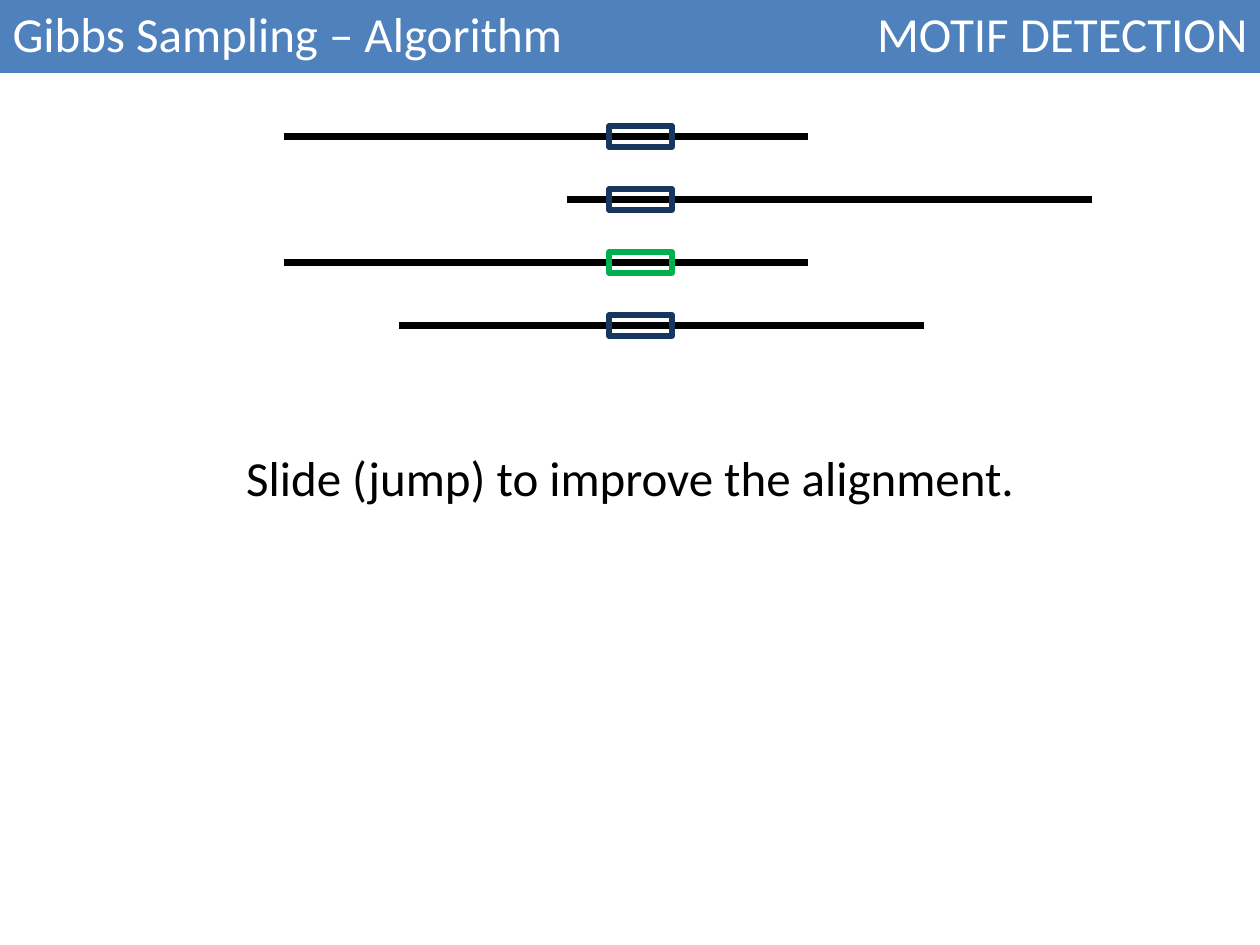
import pptx
import pptx.util
import pptx.dml.color
import pptx.enum.shapes
import pptx.enum.text
import pptx.oxml
import pptx.oxml.ns

Pt = pptx.util.Pt
Align = pptx.enum.text.PP_ALIGN
Anchor = pptx.enum.text.MSO_ANCHOR
HUES = {"bar": "4F81BD", "white": "FFFFFF", "black": "000000",
        "navy": "17375E", "green": "00B050"}


def hue(name):
    return pptx.dml.color.RGBColor.from_string(HUES[name])


def write(frame, text, name, align):
    par = frame.paragraphs[0]
    par.alignment = align
    run = par.add_run()
    run.text = text
    run.font.color.rgb = hue(name)
    style = {"name": "Calibri", "size": Pt(28), "bold": False}
    for key, value in style.items():
        setattr(run.font, key, value)


deck = pptx.Presentation()
deck.slide_width, deck.slide_height = Pt(720), Pt(540)
slide = deck.slides.add_slide(deck.slide_layouts[6])
shapes = slide.shapes

# Title bar: a table of one row, without borders
table = shapes.add_table(1, 2, 0, 0, Pt(720), Pt(41)).table
table.first_row = table.horz_banding = False
titles = [
    ("Gibbs Sampling – Algorithm", 432, Align.LEFT, Anchor.TOP),
    ("MOTIF DETECTION", 288, Align.RIGHT, Anchor.MIDDLE),
]
for col, (text, width, align, anchor) in enumerate(titles):
    table.columns[col].width = Pt(width)
    cell = table.cell(0, col)
    cell.vertical_anchor = anchor
    write(cell.text_frame, text, "white", align)
    props = cell._tc.get_or_add_tcPr()
    for side in ("lnL", "lnR", "lnT", "lnB"):
        edge = pptx.oxml.parse_xml(
            f'<a:{side} {pptx.oxml.ns.nsdecls("a")} w="0"><a:noFill/></a:{side}>')
        props.append(edge)
    cell.fill.solid()
    cell.fill.fore_color.rgb = hue("bar")

# Sequences: start of each line and colour of its motif
rows = [(162, "navy"), (324, "navy"), (162, "green"), (228, "navy")]
top, step, length = 78, 36, 300
for row, (left, _) in enumerate(rows):
    y = Pt(top + row * step)
    line = shapes.add_connector(pptx.enum.shapes.MSO_CONNECTOR.STRAIGHT,
                                Pt(left), y, Pt(left + length), y)
    line.line.color.rgb = hue("black")
    line.line.width = Pt(4.5)
    line._element.spPr.append(pptx.oxml.parse_xml(
        f'<a:effectLst {pptx.oxml.ns.nsdecls("a")}/>'))

# Motif windows, centred on the lines
tall = 12
for row, (_, name) in enumerate(rows):
    box = shapes.add_shape(pptx.enum.shapes.MSO_SHAPE.RECTANGLE, Pt(348),
                           Pt(top + row * step - tall / 2), Pt(36), Pt(tall))
    box.shadow.inherit = False
    box.fill.background()
    box.line.color.rgb = hue(name)
    box.line.width = Pt(3)

# Caption
note = shapes.add_textbox(Pt(48), Pt(252), Pt(624), Pt(41.2)).text_frame
note.word_wrap = True
note.auto_size = pptx.enum.text.MSO_AUTO_SIZE.SHAPE_TO_FIT_TEXT
write(note, "Slide (jump) to improve the alignment.", "black", Align.CENTER)

deck.save("out.pptx")
